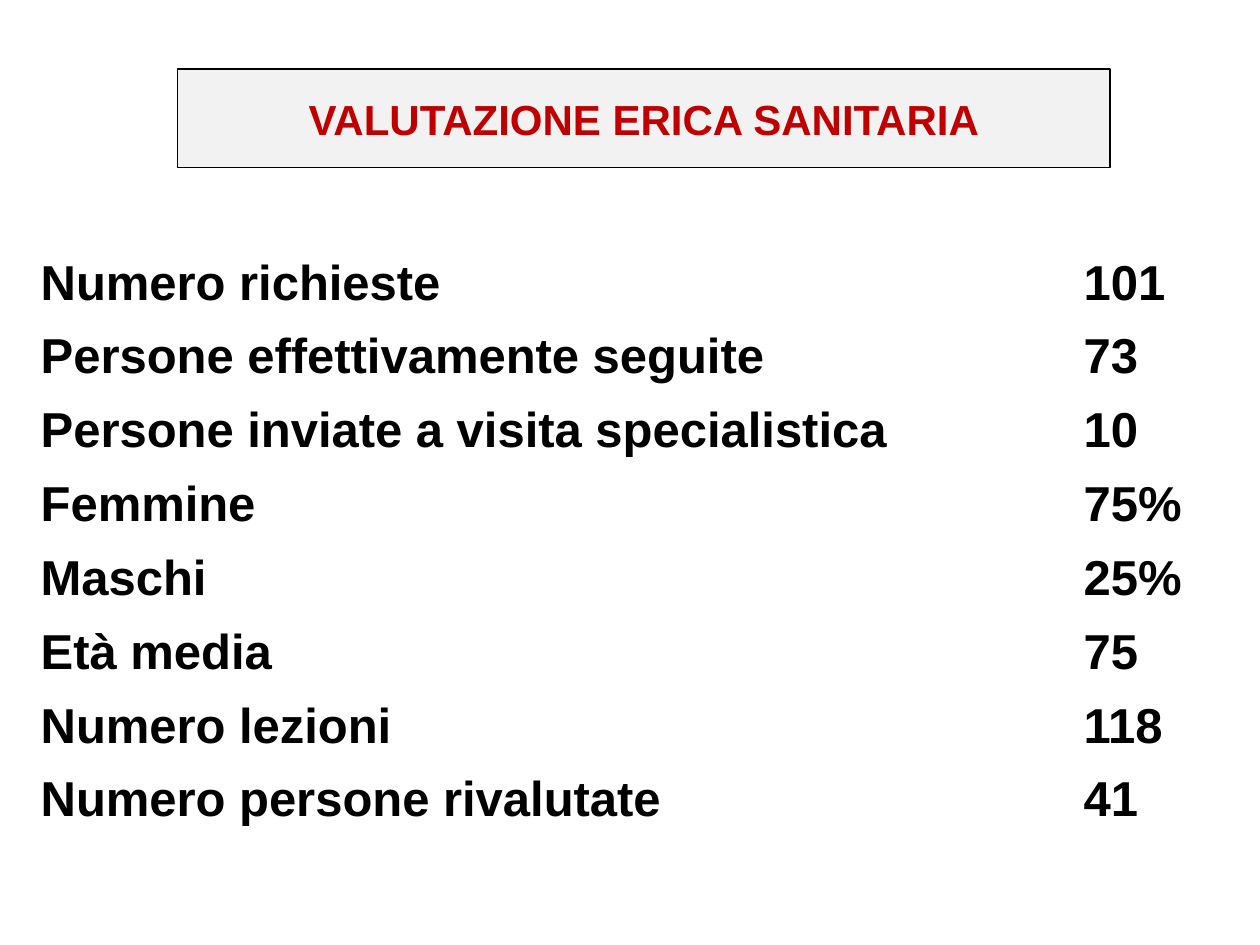
from dataclasses import dataclass

from pptx import Presentation
from pptx.dml.color import RGBColor
from pptx.enum import shapes, text
from pptx.util import Pt


@dataclass(frozen=True)
class Theme:
    font: str = "Arial"
    paper: RGBColor = RGBColor(0xFF, 0xFF, 0xFF)
    panel: RGBColor = RGBColor(0xF2, 0xF2, 0xF2)
    ink: RGBColor = RGBColor(0x00, 0x00, 0x00)
    accent: RGBColor = RGBColor(0xC0, 0x00, 0x00)
    title_size: float = 24
    table_size: float = 28
    line_width: float = 0.75


@dataclass(frozen=True)
class Box:
    left: float
    top: float
    width: float
    height: float

    def lengths(self):
        return [Pt(n) for n in (self.left, self.top, self.width, self.height)]


THEME = Theme()
PAGE = Box(0, 0, 720, 540)
TITLE = Box(101.5, 39.4, 532.8, 56.4)
RESULTS = Box(22.5, 135.2, 680.4, 337.6)
LABEL_SHARE = 0.876
ROWS = [
    ("Numero richieste", "101"),
    ("Persone effettivamente seguite", "73"),
    ("Persone inviate a visita specialistica", "10"),
    ("Femmine", "75%"),
    ("Maschi", "25%"),
    ("Età media", "75"),
    ("Numero lezioni", "118"),
    ("Numero persone rivalutate", "41"),
]


def write(para, words, size, colour):
    span = para.add_run()
    span.text = words
    span.font.name = THEME.font
    span.font.size = Pt(size)
    span.font.bold = True
    span.font.color.rgb = colour


def add_backdrop(page, box):
    backdrop = page.shapes.add_shape(shapes.MSO_SHAPE.RECTANGLE, *box.lengths())
    backdrop.shadow.inherit = False
    backdrop.fill.solid()
    backdrop.fill.fore_color.rgb = THEME.paper
    backdrop.line.fill.background()
    page.shapes.title.element.addprevious(backdrop.element)


def place_title(page, box, words):
    title = page.shapes.title
    title.left, title.top, title.width, title.height = box.lengths()
    title.fill.solid()
    title.fill.fore_color.rgb = THEME.panel
    title.line.color.rgb = THEME.ink
    title.line.width = Pt(THEME.line_width)
    frame = title.text_frame
    frame.word_wrap = True
    frame.auto_size = text.MSO_AUTO_SIZE.NONE
    frame.vertical_anchor = text.MSO_ANCHOR.MIDDLE
    para = frame.paragraphs[0]
    para.alignment = text.PP_ALIGN.CENTER
    write(para, words, THEME.title_size, THEME.accent)


def add_results(page, box, rows):
    table = page.shapes.add_table(len(rows), 2, *box.lengths()).table
    table.first_row = False
    table.horz_banding = False
    for column, share in zip(table.columns, (LABEL_SHARE, 1 - LABEL_SHARE)):
        column.width = Pt(box.width * share)
    for row, entries in zip(table.rows, rows):
        row.height = Pt(box.height / len(rows))
        for cell, words in zip(row.cells, entries):
            cell.fill.background()
            cell.vertical_anchor = text.MSO_ANCHOR.BOTTOM
            cell.margin_left = cell.margin_right = cell.margin_top = Pt(0.75)
            cell.margin_bottom = Pt(0)
            write(cell.text_frame.paragraphs[0], words, THEME.table_size, THEME.ink)


def main():
    deck = Presentation()
    deck.slide_width, deck.slide_height = Pt(PAGE.width), Pt(PAGE.height)
    page = deck.slides.add_slide(deck.slide_layouts.get_by_name("Title Only"))
    add_backdrop(page, PAGE)
    place_title(page, TITLE, "VALUTAZIONE ERICA SANITARIA")
    add_results(page, RESULTS, ROWS)
    deck.save("out.pptx")


if __name__ == "__main__":
    main()
